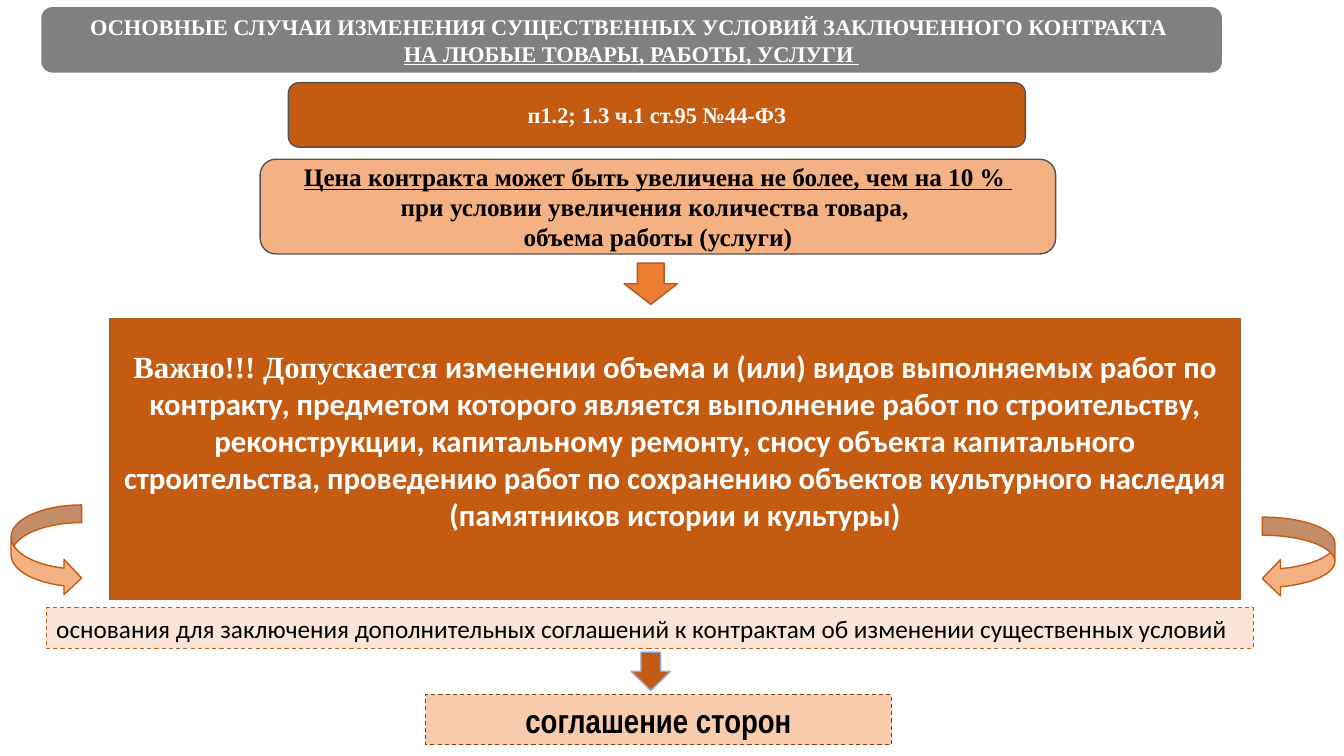
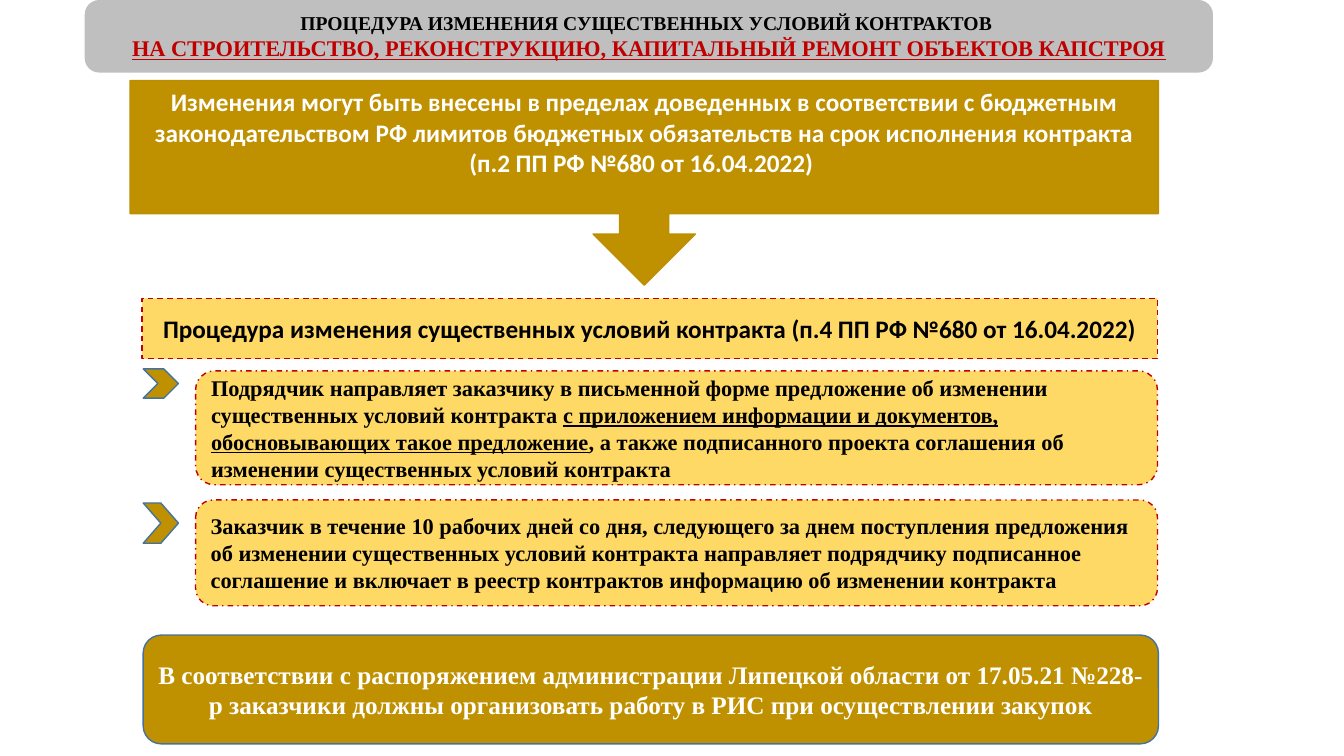
"""Build two slides on changing the essential terms of a contract."""
from lxml import etree
from pptx import Presentation
from pptx.dml.color import RGBColor
from pptx.enum.dml import MSO_LINE
from pptx.enum.shapes import MSO_SHAPE
from pptx.enum.text import MSO_ANCHOR, PP_ALIGN
from pptx.util import Emu, Pt

PX = 9144
WIDE, HIGH = 1333, 750

RECT, ROUND = MSO_SHAPE.RECTANGLE, MSO_SHAPE.ROUNDED_RECTANGLE
DOWN, CALL = MSO_SHAPE.DOWN_ARROW, MSO_SHAPE.DOWN_ARROW_CALLOUT
CHEV = MSO_SHAPE.CHEVRON
CURVE_R, CURVE_L = MSO_SHAPE.CURVED_RIGHT_ARROW, MSO_SHAPE.CURVED_LEFT_ARROW
DASH, DOT = MSO_LINE.DASH, MSO_LINE.DASH_DOT
LEFT, MID = PP_ALIGN.LEFT, PP_ALIGN.CENTER
MIDDLE = MSO_ANCHOR.MIDDLE

WHITE = RGBColor(0xFF, 0xFF, 0xFF)
BLACK = RGBColor(0x00, 0x00, 0x00)
GRAY = RGBColor(0x80, 0x80, 0x80)
SILVER = RGBColor(0xBF, 0xBF, 0xBF)
SLATE = RGBColor(0x52, 0x52, 0x52)
RUST = RGBColor(0xC5, 0x5A, 0x11)
EDGE = RGBColor(0xAF, 0x5C, 0x24)
ORANGE = RGBColor(0xED, 0x7D, 0x31)
PEACH = RGBColor(0xF4, 0xB1, 0x83)
CREAM = RGBColor(0xFB, 0xE5, 0xD6)
SALMON = RGBColor(0xF8, 0xCB, 0xAD)
BROWN = RGBColor(0x84, 0x3C, 0x0B)
SKY = RGBColor(0x8F, 0xAA, 0xDC)
GOLD = RGBColor(0xBF, 0x90, 0x00)
OCHRE = RGBColor(0xBD, 0x8E, 0x00)
YELLOW = RGBColor(0xFF, 0xD9, 0x66)
RED = RGBColor(0xC0, 0x00, 0x00)
BLUE = RGBColor(0x43, 0x73, 0x9E)

SERIF = {"name": "Times New Roman", "bold": True}
SANS = {"name": "Calibri", "bold": True}
PLAIN = {"name": "Calibri", "bold": False}
NARROW = {"name": "Arial Narrow", "bold": True}
UNDER = {"underline": True}

HEADS = [
    ((41, 7, 1171, 65), GRAY, WHITE, 0.17, [
        [("ОСНОВНЫЕ СЛУЧАИ ИЗМЕНЕНИЯ СУЩЕСТВЕННЫХ УСЛОВИЙ ЗАКЛЮЧЕННОГО КОНТРАКТА ", {})],
        [("НА ЛЮБЫЕ ТОВАРЫ, РАБОТЫ, УСЛУГИ ", UNDER)]]),
    ((84, 0, 1119, 72), SILVER, BLACK, 0.2, [
        [("ПРОЦЕДУРА ИЗМЕНЕНИЯ СУЩЕСТВЕННЫХ УСЛОВИЙ КОНТРАКТОВ ", {"size": Pt(14)})],
        [("НА СТРОИТЕЛЬСТВО, РЕКОНСТРУКЦИЮ, КАПИТАЛЬНЫЙ РЕМОНТ ОБЪЕКТОВ КАПСТРОЯ",
          {"underline": True, "color": RED})]]),
]

PRICE = [
    [("Цена контракта может быть увеличена не более, чем на 10 % ", UNDER)],
    [("при условии увеличения количества товара, ", {})],
    [("объема работы (услуги)", {})],
]
NOTE = [[
    ("Важно!!! Допускается ", SERIF),
    ("изменении объема и (или) видов выполняемых работ по контракту, предметом которого "
     "является выполнение работ по строительству, реконструкции, капитальному ремонту, "
     "сносу объекта капитального строительства, проведению работ по сохранению объектов "
     "культурного наследия (памятников истории и культуры)", {}),
]]
BASIS = [[("основания для заключения дополнительных соглашений к контрактам "
           "об изменении существенных условий", {})]]
LIMIT = [[("Изменения могут быть внесены в пределах доведенных в соответствии с бюджетным "
           "законодательством РФ лимитов бюджетных обязательств на срок исполнения "
           "контракта (п.2 ПП РФ №680 от 16.04.2022) ", {})]]
ORDER = [[("В соответствии с распоряжением администрации Липецкой области от 17.05.21 "
           "№228-р заказчики должны организовать работу в РИС при осуществлении закупок", {})]]
STEPS = [
    (368, 113, 366, 29, [[
        ("Подрядчик направляет заказчику в письменной форме предложение об изменении "
         "существенных условий контракта ", {}),
        ("с приложением информации и документов, обосновывающих такое предложение", UNDER),
        (", а также подписанного проекта соглашения об изменении существенных условий "
         "контракта", {})]]),
    (496, 105, 499, 40, [[
        ("Заказчик в течение 10 рабочих дней со дня, следующего за днем поступления "
         "предложения об изменении существенных условий контракта направляет подрядчику "
         "подписанное соглашение и включает в реестр контрактов информацию об изменении "
         "контракта", {})]]),
]

CASES = [
    (ROUND, (286, 82, 731, 64), RUST, (SLATE, 1, None),
     {"paras": [[("п1.2; 1.3 ч.1 ст.95 №44-ФЗ", {})]], "color": WHITE}),
    (ROUND, (258, 158, 789, 94), PEACH, (SLATE, 1, None), {"paras": PRICE, "size": 18}),
    (DOWN, (619, 261, 53, 41), ORANGE, (EDGE, 1, None), {}),
    (RECT, (109, 316, 1121, 279), RUST, (EDGE, 1, None),
     {"paras": NOTE, "face": SANS, "size": 22, "color": WHITE, "foot": 42}),
    (CURVE_R, (11, 501, 70, 90), PEACH, (RUST, 1, None), {}),
    (CURVE_L, (1252, 513, 72, 79), PEACH, (RUST, 1, None), {}),
    (RECT, (46, 603, 1197, 40), CREAM, (RUST, 0.75, DASH),
     {"paras": BASIS, "face": PLAIN, "size": 18, "align": LEFT}),
    (RECT, (422, 689, 462, 50), SALMON, (BROWN, 0.75, DASH),
     {"paras": [[("соглашение сторон", {})]], "face": NARROW, "size": 24}),
    (DOWN, (626, 647, 39, 38), RUST, (SKY, 1, None), {}),
]
PROCESS = [
    (ROUND, (142, 630, 1007, 108), GOLD, (BLUE, 1, None),
     {"paras": ORDER, "size": 18, "color": WHITE}),
    (RECT, (141, 296, 1007, 60), YELLOW, (RED, 1, DASH),
     {"paras": [[("Процедура изменения существенных условий контракта "
                  "(п.4 ПП РФ №680 от 16.04.2022)", {})]], "face": SANS, "size": 18}),
    (CALL, (129, 80, 1020, 203), GOLD, (OCHRE, 1, None),
     {"paras": LIMIT, "face": SANS, "size": 18, "color": WHITE, "foot": 35,
      "adjust": (0.24, 0.25, 0.25, 0.65)}),
]


def style(font, form):
    """Apply a dict of format values to a font."""
    for key, val in form.items():
        if key == "color":
            font.color.rgb = val
        else:
            setattr(font, key, val)


def write(shape, paras, face=SERIF, size=16, color=BLACK, align=MID, foot=5):
    """Fill a shape with paragraphs of formatted runs."""
    frame = shape.text_frame
    form = {"word_wrap": True, "vertical_anchor": MIDDLE, "margin_bottom": Emu(foot * PX)}
    for key, val in form.items():
        setattr(frame, key, val)
    base = {**face, "size": Pt(size), "color": color}
    for num, runs in enumerate(paras):
        para = frame.paragraphs[0] if num == 0 else frame.add_paragraph()
        para.alignment = align
        for text, more in runs:
            run = para.add_run()
            run.text = text
            style(run.font, {**base, **more})


def draw(slide, kind, box, fill, line=None, paras=(), adjust=(), **form):
    """Add one filled shape with its outline and text."""
    shape = slide.shapes.add_shape(kind, *(Emu(side * PX) for side in box))
    shape.shadow.inherit = False
    shape.fill.solid()
    shape.fill.fore_color.rgb = fill
    if line:
        shape.line.color.rgb = line[0]
        shape.line.width = Pt(line[1])
        if line[2]:
            shape.line.dash_style = line[2]
    else:
        shape.line.fill.background()
    for num, val in enumerate(adjust):
        shape.adjustments[num] = val
    if paras:
        write(shape, paras, **form)


def start(deck, head):
    """Add a blank slide with its title band."""
    box, fill, color, bend, paras = head
    slide = deck.slides.add_slide(deck.slide_layouts[6])
    draw(slide, ROUND, box, fill, paras=paras, color=color, adjust=(bend,))
    return slide


def main():
    """Build and save the deck."""
    deck = Presentation()
    deck.slide_width, deck.slide_height = Emu(WIDE * PX), Emu(HIGH * PX)
    steps = []
    for top, high, tip, size, paras in STEPS:
        steps += [
            (CHEV, (142, tip, 35, size), GOLD, (BLUE, 1, None), {}),
            (ROUND, (194, top, 954, high), YELLOW, (RED, 1, DOT),
             {"paras": paras, "align": LEFT}),
        ]
    for head, parts in zip(HEADS, (CASES, steps + PROCESS)):
        slide = start(deck, head)
        for kind, box, fill, line, form in parts:
            draw(slide, kind, box, fill, line, **form)
    deck.save("out.pptx")


if __name__ == "__main__":
    main()
